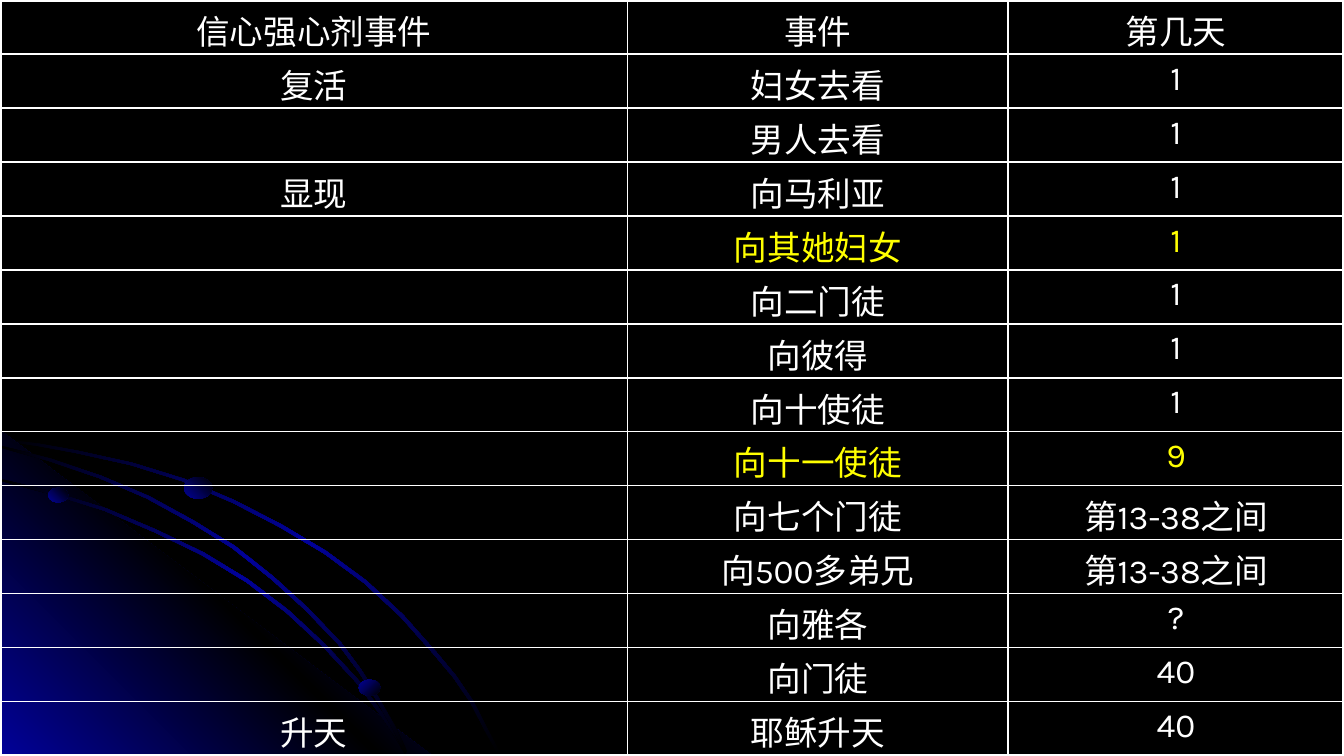
from lxml import etree
from pptx import Presentation, util as u
from pptx.dml.color import RGBColor
from pptx.enum import shapes, text
from pptx.oxml import ns

WIDE, HIGH = 25.4, 14.29
WHITE, YELLOW, BLACK, BLUE = "FFFFFF", "FFFF00", "000000", "010199"
COLS = [11.86, 7.19, 6.35]
MARKED = {4, 8}
ROWS = [
    ("信心强心剂事件", "事件", "第几天"),
    ("复活", "妇女去看", "1"),
    ("", "男人去看", "1"),
    ("显现", "向马利亚", "1"),
    ("", "向其她妇女", "1"),
    ("", "向二门徒", "1"),
    ("", "向彼得", "1"),
    ("", "向十使徒", "1"),
    ("", "向十一使徒", "9"),
    ("", "向七个门徒", "第13-38之间"),
    ("", "向500多弟兄", "第13-38之间"),
    ("", "向雅各", "?"),
    ("", "向门徒", "40"),
    ("升天", "耶稣升天", "40"),
]
OUTER = [(0, 8.33), (0.71, 8.43), (1.42, 8.56), (2.46, 8.79), (3.43, 9.09),
         (4.39, 9.5), (5.28, 9.96), (6.12, 10.46), (6.88, 11.02),
         (7.57, 11.66), (8.2, 12.37), (8.56, 12.8), (8.89, 13.28),
         (9.14, 13.77), (9.4, 14.25)]
INNER = [(0, 9.09), (0.99, 9.35), (1.96, 9.65), (2.92, 10.06), (3.81, 10.49),
         (4.65, 11), (5.41, 11.58), (6.1, 12.22), (6.73, 12.9),
         (7.24, 13.59), (7.47, 13.94), (7.65, 14.25)]
MIDDLE = [(0, 8.46), (0.91, 8.71), (1.88, 9.04), (2.77, 9.42), (3.61, 9.88),
          (4.39, 10.36), (5.13, 10.95), (5.77, 11.53), (6.4, 12.19),
          (6.78, 12.7), (7.11, 13.23), (7.42, 13.77), (7.65, 14.25)]
CORNER = [(8.18, HIGH), (0, HIGH), (0, 8.13)]
DOTS = [(0.91, 9.22, 0.38, 0.28, 315), (6.78, 12.85, 0.41, 0.3, 45),
        (3.48, 9.02, 0.53, 0.41, 315)]


def color(code):
    return RGBColor.from_string(code)


def add(node, tag, **attrs):
    return etree.SubElement(node, ns.qn(tag), **attrs)


class Deck:
    """Hold the style and the current slide, and draw each kind of element."""

    def __init__(self):
        self.show = Presentation()
        self.show.slide_width, self.show.slide_height = u.Cm(WIDE), u.Cm(HIGH)
        self.font, self.size = "Karla", u.Pt(18)
        self.slide = self.show.slides.add_slide(self.show.slide_layouts[6])
        back = self.slide.background.fill
        back.solid()
        back.fore_color.rgb = color(BLACK)

    def shade(self, shape, codes, angle):
        shape.shadow.inherit = False
        shape.line.fill.background()
        shape.fill.gradient()
        shape.fill.gradient_angle = 360 - angle
        stops = shape.element.spPr.find(".//" + ns.qn("a:gsLst"))
        for old in list(stops):
            stops.remove(old)
        for i, code in enumerate(codes):
            stop = add(stops, "a:gs", pos=str(100000 * i // (len(codes) - 1)))
            add(stop, "a:srgbClr", val=code)

    def area(self, points, codes, angle):
        spots = [(u.Cm(x), u.Cm(y)) for x, y in points]
        build = self.slide.shapes.build_freeform(*spots[0])
        build.add_line_segments(spots[1:], close=True)
        self.shade(build.convert_to_shape(), codes, angle)

    def arc(self, curve):
        edge = [(x + 0.05 if x else 0, y - 0.04) for x, y in curve]
        self.area(curve + edge[::-1], [BLACK, BLUE, BLACK], 45)

    def dot(self, left, top, width, height, angle):
        box = [u.Cm(n) for n in (left, top, width, height)]
        shape = self.slide.shapes.add_shape(shapes.MSO_SHAPE.OVAL, *box)
        self.shade(shape, [BLUE, BLACK], angle)

    def cell(self, cell, words, code, thick):
        cell.margin_left = cell.margin_right = u.Cm(0.25)
        cell.margin_top, cell.margin_bottom = u.Cm(0.1), 0
        cell.fill.background()
        props = cell._tc.get_or_add_tcPr()
        for i, side in enumerate("LRTB"):
            width = u.Pt(2.25 if side in thick else 1)
            line = add(props, "a:ln" + side, w=str(int(width)))
            add(add(line, "a:solidFill"), "a:srgbClr", val=WHITE)
            props.insert(i, line)
        para = cell.text_frame.paragraphs[0]
        para.alignment = text.PP_ALIGN.CENTER
        if words:
            run = para.add_run()
            run.text = words
            run.font.name, run.font.size = self.font, self.size
            run.font.color.rgb = color(code)

    def table(self, rows, cols, marked):
        last, end = len(rows) - 1, len(cols) - 1
        grid = self.slide.shapes.add_table(
            len(rows), len(cols), 0, 0, u.Cm(WIDE), u.Cm(HIGH)).table
        grid.first_row = grid.horz_banding = False
        for col, width in zip(grid.columns, cols):
            col.width = u.Cm(width)
        for r, row in enumerate(rows):
            code = YELLOW if r in marked else WHITE
            for c, words in enumerate(row):
                thick = ("L" * (c == 0) + "R" * (c == end)
                         + "T" * (r == 0) + "B" * (r == last))
                self.cell(grid.cell(r, c), words, code, thick)

    def save(self):
        self.show.save("out.pptx")


def main():
    deck = Deck()
    deck.arc(OUTER)
    deck.area(CORNER, [BLUE, BLACK, BLUE], 315)
    deck.arc(INNER)
    deck.arc(MIDDLE)
    for dot in DOTS:
        deck.dot(*dot)
    deck.table(ROWS, COLS, MARKED)
    deck.save()


if __name__ == "__main__":
    main()
